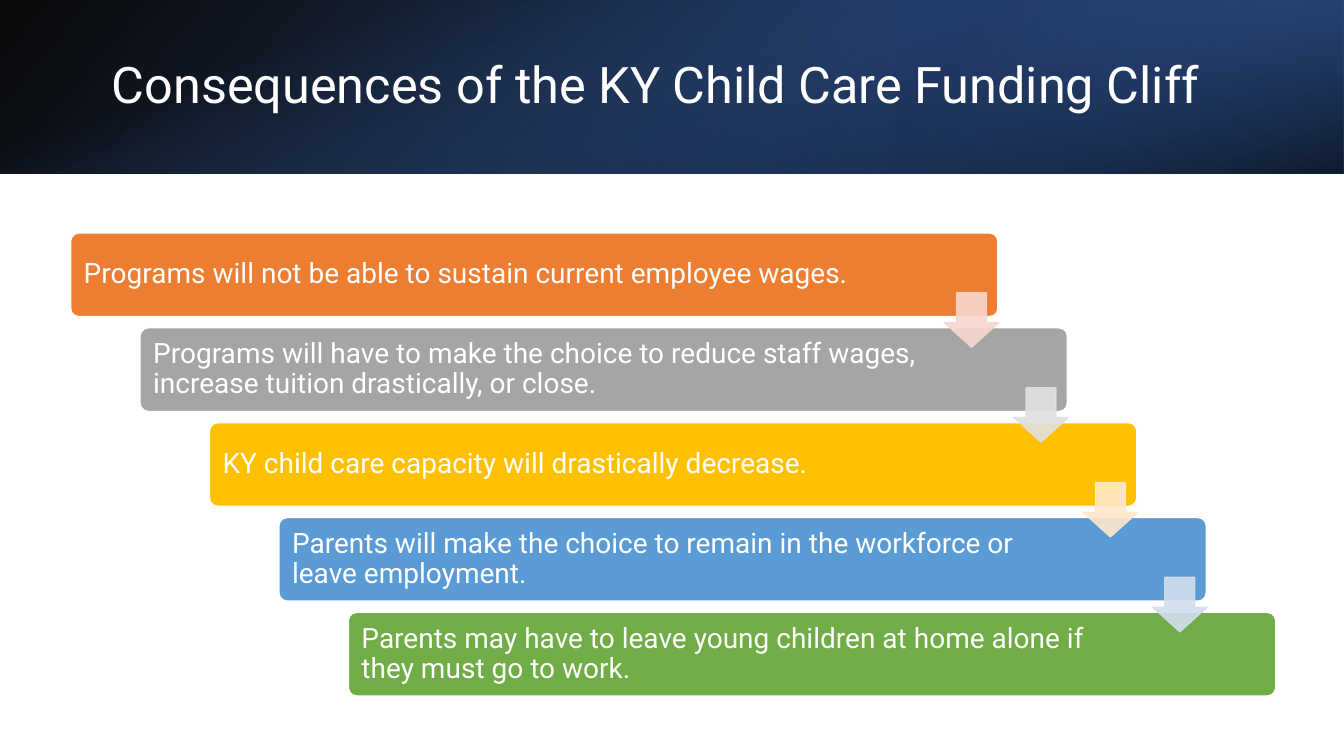
"""Build the slide on the consequences of the child care funding cliff."""
from lxml.etree import SubElement
from pptx import Presentation
from pptx.dml.color import RGBColor
from pptx.enum.shapes import MSO_SHAPE
from pptx.enum.text import MSO_ANCHOR, PP_ALIGN
from pptx.oxml.ns import qn
from pptx.util import Cm, Pt

TITLE = "Consequences of the KY Child Care Funding Cliff"
STEPS = [
    ("Programs will not be able to sustain current employee wages.", "orange"),
    ("Programs will have to make the choice to reduce staff wages, "
     "increase tuition drastically, or close.", "gray"),
    ("KY child care capacity will drastically decrease.", "gold"),
    ("Parents will make the choice to remain in the workforce or leave employment.", "blue"),
    ("Parents may have to leave young children at home alone if they must go to work.", "green"),
]
ARROW_COLORS = ["pale_orange", "pale_gray", "pale_gold", "pale_blue"]
COLORS = {
    "white": "FFFFFF", "black": "000000", "navy": "203864", "deep_blue": "2F5597",
    "royal": "4472C4", "orange": "ED7D31", "gray": "A5A5A5", "gold": "FFC000",
    "blue": "5B9BD5", "green": "70AD47", "pale_orange": "F8D7CE",
    "pale_gray": "E1E1E1", "pale_gold": "FFE8CC", "pale_blue": "D2DEEF",
}

SLIDE_W, SLIDE_H, BANNER_H = 33.87, 19.05, 4.37
BANNER_LAYERS = [
    {"box": (0, 0, SLIDE_W, BANNER_H), "rotation": 0, "flip": True, "angle": 140,
     "stops": [(0, "black", 96), (1, "deep_blue", 100)]},
    {"box": (SLIDE_W * 2 / 3, 0, SLIDE_W / 3, BANNER_H), "rotation": 180, "flip": True,
     "angle": 320, "stops": [(0.19, "navy", 68), (1, "royal", 79)]},
    {"box": ((SLIDE_W - BANNER_H) / 2, (BANNER_H - SLIDE_W) / 2, BANNER_H, SLIDE_W),
     "rotation": 90, "flip": False, "angle": 340,
     "stops": [(0.23, "royal", 0), (0.99, "black", 74)]},
]
TITLE_BOX = (2.57, 0.97, 28.83, 2.44)
STEP_LEFT, STEP_TOP, STEP_W, STEP_H = 1.78, 5.87, 23.37, 2.11
STEP_DX, STEP_DY = 1.75, 2.39
ARROW_DX, ARROW_DY, ARROW_SIZE = 22.02, 1.51, 1.37
TITLE_FRAME = {"word_wrap": True, "vertical_anchor": MSO_ANCHOR.MIDDLE}
STEP_FRAME = TITLE_FRAME | {
    "margin_left": Cm(0.27), "margin_right": Cm(3.36),
    "margin_top": Cm(0.27), "margin_bottom": Cm(0.27),
}


def rgb(color):
    return RGBColor.from_string(COLORS[color])


def set_alpha(color_holder, percent):
    for color in color_holder.iter(qn("a:srgbClr")):
        SubElement(color, qn("a:alpha"), val=str(percent * 1000))


def add_part(slide, kind, box, adjustments=()):
    part = slide.shapes.add_shape(kind, *map(Cm, box))
    part.shadow.inherit = False
    for index, value in enumerate(adjustments):
        part.adjustments[index] = value
    return part


def paint(part, fill, line):
    part.fill.solid()
    part.fill.fore_color.rgb = rgb(fill)
    part.line.color.rgb = rgb(line)
    part.line.width = Pt(1)


def write(part, text, size, frame_format):
    frame = part.text_frame
    for name, value in frame_format.items():
        setattr(frame, name, value)
    paragraph = frame.paragraphs[0]
    paragraph.text = text
    paragraph.alignment = PP_ALIGN.LEFT
    paragraph.line_spacing = 0.9
    for name, value in {"name": "Roboto", "size": Pt(size)}.items():
        setattr(paragraph.runs[0].font, name, value)
    paragraph.runs[0].font.color.rgb = rgb("white")


def add_banner(slide):
    for layer in BANNER_LAYERS:
        banner = add_part(slide, MSO_SHAPE.RECTANGLE, layer["box"])
        banner.rotation = layer["rotation"]
        if layer["flip"]:
            banner.element.spPr.find(qn("a:xfrm")).set("flipH", "1")
        banner.line.fill.background()
        banner.fill.gradient()
        banner.fill.gradient_angle = 360 - layer["angle"]
        stops = banner.fill.gradient_stops
        for stop, (position, color, _) in zip(stops, layer["stops"]):
            stop.position = position
            stop.color.rgb = rgb(color)
        stop_elements = banner.element.spPr.iter(qn("a:gs"))
        for element, (_, _, alpha) in zip(stop_elements, layer["stops"]):
            set_alpha(element, alpha)


def add_staircase(slide):
    corners = [(STEP_LEFT + i * STEP_DX, STEP_TOP + i * STEP_DY) for i in range(len(STEPS))]
    for (text, color), (left, top) in zip(STEPS, corners):
        step = add_part(slide, MSO_SHAPE.ROUNDED_RECTANGLE,
                        (left, top, STEP_W, STEP_H), [0.1])
        paint(step, color, "white")
        write(step, text, 20, STEP_FRAME)
    for color, (left, top) in zip(ARROW_COLORS, corners):
        arrow = add_part(slide, MSO_SHAPE.DOWN_ARROW,
                         (left + ARROW_DX, top + ARROW_DY, ARROW_SIZE, ARROW_SIZE),
                         [0.55, 0.45])
        paint(arrow, color, color)
        set_alpha(arrow.element.spPr, 90)


def main():
    deck = Presentation()
    deck.slide_width, deck.slide_height = Cm(SLIDE_W), Cm(SLIDE_H)
    slide = deck.slides.add_slide(deck.slide_layouts[6])
    add_banner(slide)
    write(slide.shapes.add_textbox(*map(Cm, TITLE_BOX)), TITLE, 36, TITLE_FRAME)
    add_staircase(slide)
    deck.save("out.pptx")


if __name__ == "__main__":
    main()
